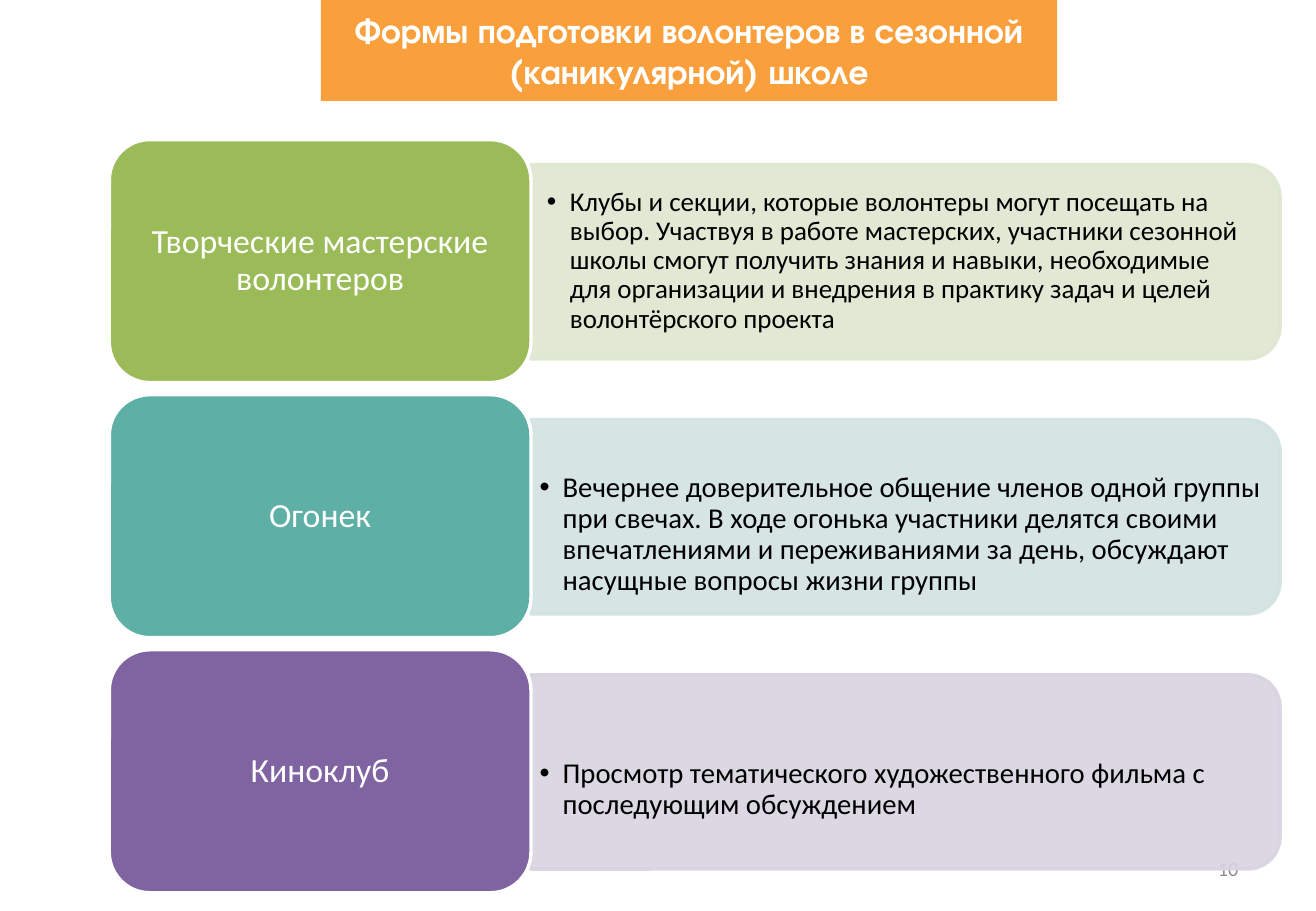
from dataclasses import dataclass

from lxml import etree
from pptx import Presentation
from pptx import util as u
from pptx.dml.color import RGBColor
from pptx.enum import shapes, text
from pptx.oxml import ns

SCALE = 9144  # EMU in one px, 100 px to the inch
WHITE = RGBColor(0xFF, 0xFF, 0xFF)
BLACK = RGBColor(0, 0, 0)
GREY = RGBColor(0x8C, 0x8C, 0x8C)
ORANGE = RGBColor(0xF9, 0x9F, 0x3C)
GREEN = RGBColor(0x9B, 0xBB, 0x59)
TEAL = RGBColor(0x5E, 0xAF, 0xA6)
PURPLE = RGBColor(0x80, 0x64, 0xA2)
PALE_GREEN = RGBColor(0xDE, 0xE7, 0xD1)
PALE_TEAL = RGBColor(0xD2, 0xE3, 0xE2)
PALE_PURPLE = RGBColor(0xD8, 0xD3, 0xE0)

LEFT, TOP, PITCH = 90, 115, 210
CARD_W, CARD_H = 347, 200
PANEL_W, PANEL_H = 617, 160
NOTE_W, NOTE_H = 609, 144
INDENT = 19


@dataclass(frozen=True)
class Form:
    name: str
    note: str
    fill: RGBColor
    pale: RGBColor
    size: int
    pads: tuple[int, int, int, int]


FORMS = [
    Form("Творческие мастерские волонтеров",
         "Клубы и секции, которые волонтеры могут посещать на выбор. "
         "Участвуя в работе мастерских, участники сезонной школы смогут "
         "получить знания и навыки, необходимые для организации и внедрения "
         "в практику задач и целей волонтёрского проекта",
         GREEN, PALE_GREEN, 16, (13, 6, 13, 6)),
    Form("Огонек",
         "Вечернее доверительное общение членов одной группы при свечах. "
         "В ходе огонька участники делятся своими впечатлениями и "
         "переживаниями за день, обсуждают насущные вопросы жизни группы",
         TEAL, PALE_TEAL, 17, (7, 34, 7, 4)),
    Form("Киноклуб",
         "Просмотр тематического художественного фильма с последующим "
         "обсуждением",
         PURPLE, PALE_PURPLE, 17, (7, 34, 7, 4)),
]


def px(*vals: int) -> list[u.Emu]:
    return [u.Emu(v * SCALE) for v in vals]


def write(frame, words: str, size: int, color: RGBColor, align,
          pads: tuple[int, int, int, int] = (10, 5, 10, 5),
          font: str = "Calibri", bold: bool = False):
    """Fill a frame with one centred-in-height paragraph and return it."""
    frame.word_wrap = True
    frame.auto_size = text.MSO_AUTO_SIZE.NONE
    frame.vertical_anchor = text.MSO_ANCHOR.MIDDLE
    (frame.margin_left, frame.margin_top,
     frame.margin_right, frame.margin_bottom) = px(*pads)
    para = frame.paragraphs[0]
    para.alignment = align
    run = para.add_run()
    run.text = words
    run.font.name, run.font.size, run.font.bold = font, u.Pt(size), bold
    run.font.color.rgb = color
    return para


def add_block(slide, kind, box: tuple[int, int, int, int],
              fill: RGBColor, line: RGBColor):
    block = slide.shapes.add_shape(kind, *px(*box))
    block.shadow.inherit = False
    block.fill.solid()
    block.fill.fore_color.rgb = fill
    block.line.color.rgb = line
    block.line.width = u.Pt(2)
    return block


def add_panel(slide, form: Form, mid: int) -> None:
    """Draw the pale panel, turned so its round corners face right."""
    centre = LEFT + CARD_W + PANEL_W // 2
    box = (centre - PANEL_H // 2, mid - PANEL_W // 2, PANEL_H, PANEL_W)
    panel = add_block(slide, shapes.MSO_SHAPE.ROUND_2_SAME_RECTANGLE, box,
                      form.pale, form.pale)
    panel.rotation = 90
    for color in panel.element.spPr.iter(ns.qn("a:srgbClr")):
        etree.SubElement(color, ns.qn("a:alpha"), val="90000")


def add_note(slide, form: Form, mid: int) -> None:
    box = (LEFT + CARD_W, mid - NOTE_H // 2, NOTE_W, NOTE_H)
    note = slide.shapes.add_textbox(*px(*box))
    para = write(note.text_frame, form.note, form.size, BLACK,
                 text.PP_ALIGN.LEFT, form.pads)
    para.line_spacing = 0.9
    props = para._p.get_or_add_pPr()
    props.set("marL", str(INDENT * SCALE))
    props.set("indent", str(-INDENT * SCALE))
    etree.SubElement(props, ns.qn("a:buFont"), typeface="Arial")
    etree.SubElement(props, ns.qn("a:buChar"), char="•")


def add_card(slide, form: Form, mid: int) -> None:
    box = (LEFT, mid - CARD_H // 2, CARD_W, CARD_H)
    card = add_block(slide, shapes.MSO_SHAPE.ROUNDED_RECTANGLE, box,
                     form.fill, WHITE)
    para = write(card.text_frame, form.name, 20, WHITE,
                 text.PP_ALIGN.CENTER, (8, 4, 8, 4))
    para.line_spacing = 0.9


def main() -> None:
    deck = Presentation()
    deck.slide_width, deck.slide_height = px(1083, 750)
    slide = deck.slides.add_slide(deck.slide_layouts.get_by_name("Title Only"))

    title = slide.shapes.title
    title.left, title.top, title.width, title.height = px(264, 0, 606, 83)
    title.fill.solid()
    title.fill.fore_color.rgb = ORANGE
    write(title.text_frame,
          "Формы подготовки волонтеров в сезонной (каникулярной) школе",
          20, WHITE, text.PP_ALIGN.CENTER, font="TeX Gyre Adventor", bold=True)

    number = slide.shapes.add_textbox(*px(776, 695, 253, 40))
    write(number.text_frame, "10", 12, GREY, text.PP_ALIGN.RIGHT)

    for row, form in enumerate(FORMS):
        mid = TOP + CARD_H // 2 + row * PITCH
        add_panel(slide, form, mid)
        add_note(slide, form, mid)
        add_card(slide, form, mid)

    deck.save("out.pptx")


if __name__ == "__main__":
    main()
